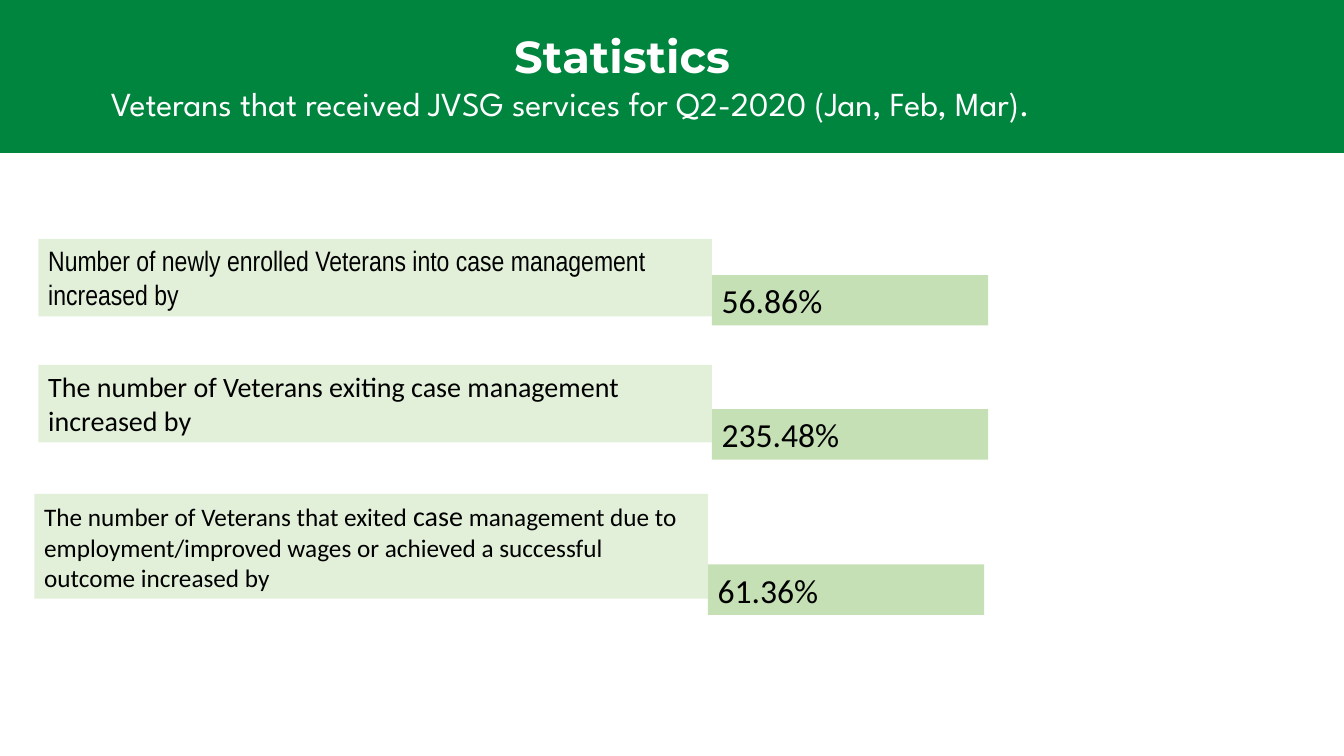
from pptx import Presentation
from pptx.dml.color import RGBColor
from pptx.enum.shapes import MSO_SHAPE as SHAPE
from pptx.enum.text import MSO_ANCHOR as ANCHOR, MSO_AUTO_SIZE as AUTO, PP_ALIGN as ALIGN
from pptx.util import Inches, Pt

STATS = [
    (0.38, 2.37, 0.77, 2.73, "56.86%", "Arial Narrow",
     [("Number of newly enrolled Veterans into case management increased by", 20)]),
    (0.38, 3.62, 0.77, 4.06, "235.48%", "Calibri",
     [("The number of Veterans exiting case management increased by", 20)]),
    (0.34, 4.9, 1.04, 5.6, "61.36%", "Calibri",
     [("The number of Veterans that exited ", 18), ("case", 20),
      (" management due to employment/improved wages or achieved a successful "
       "outcome increased by", 18)]),
]


def rgb(color):
    return RGBColor.from_string(color)


def format_run(r, font, size, color, bold=False):
    r.font.name = font
    r.font.size = Pt(size)
    r.font.bold = bold
    r.font.color.rgb = rgb(color)


def add_header(s, x, y, w, h):
    sp = s.shapes.title
    sp.left, sp.top, sp.width, sp.height = map(Inches, (x, y, w, h))
    sp.fill.solid()
    sp.fill.fore_color.rgb = rgb("00853E")
    sp.line.color.rgb = rgb("00853E")
    sp.line.width = Pt(1)
    tf = sp.text_frame
    tf.text = "Statistics\nVeterans that received JVSG services for Q2-2020 (Jan, Feb, Mar)."
    tf.auto_size = AUTO.NONE
    tf.vertical_anchor = ANCHOR.MIDDLE
    styles = [("Montserrat", 32, True, 5), ("League Spartan", 24, False, 1)]
    for p, (font, size, bold, indent) in zip(tf.paragraphs, styles):
        p.alignment = ALIGN.LEFT
        p._p.get_or_add_pPr().set("marL", str(Inches(indent)))
        format_run(p.runs[0], font, size, "FFFFFF", bold)


def add_box(s, x, y, w, h, fill, font, parts):
    sp = s.shapes.add_shape(SHAPE.RECTANGLE, *map(Inches, (x, y, w, h)))
    sp.shadow.inherit = False
    sp.fill.solid()
    sp.fill.fore_color.rgb = rgb(fill)
    sp.line.fill.background()
    tf = sp.text_frame
    tf.word_wrap = True
    tf.auto_size = AUTO.SHAPE_TO_FIT_TEXT
    tf.vertical_anchor = ANCHOR.TOP
    p = tf.paragraphs[0]
    p.alignment = ALIGN.LEFT
    for text, size in parts:
        r = p.add_run()
        r.text = text
        format_run(r, font, size, "000000")


def add_stat(s, x, y, h, value_y, value, font, parts):
    label_w = 6.68
    add_box(s, x + label_w, value_y, 2.74, 0.5, "C5E0B4", "Calibri", [(value, 24)])
    add_box(s, x, y, label_w, h, "E2F0D9", font, parts)


def main():
    prs = Presentation()
    prs.slide_width, prs.slide_height = Inches(13.33), Inches(7.5)
    s = prs.slides.add_slide(prs.slide_layouts[5])
    add_header(s, 0, 0, 13.33, 1.51)
    for stat in STATS:
        add_stat(s, *stat)
    prs.save("out.pptx")


if __name__ == "__main__":
    main()
